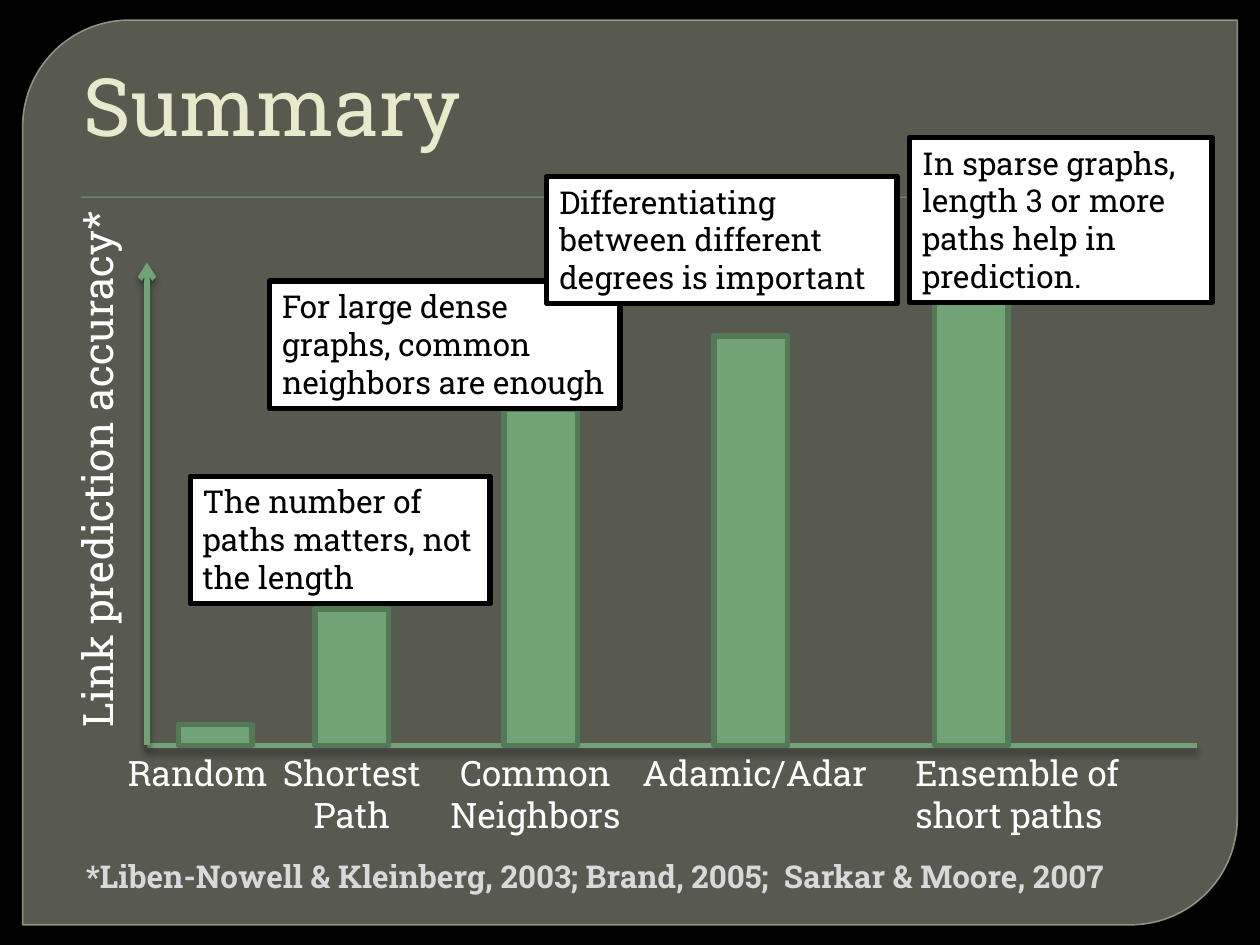
from lxml.etree import SubElement
from pptx import Presentation
from pptx.dml.color import RGBColor
from pptx.enum.shapes import MSO_CONNECTOR as Connector, MSO_SHAPE as Shape
from pptx.enum.text import MSO_ANCHOR as Anchor, PP_ALIGN as Align
from pptx.oxml.ns import qn
from pptx.util import Inches, Pt

BLACK = RGBColor(0x00, 0x00, 0x00)
WHITE = RGBColor(0xFF, 0xFF, 0xFF)
PANEL = RGBColor(0x88, 0x8B, 0x7B)
PANEL_EDGE = RGBColor(0x9D, 0xA0, 0x90)
GREEN = RGBColor(0x72, 0xA3, 0x76)
DARK_GREEN = RGBColor(0x54, 0x79, 0x57)
CREAM = RGBColor(0xE7, 0xEA, 0xCB)
SILVER = RGBColor(0xD9, 0xD9, 0xD9)

CELL = Inches(1) // 12  # the chart sits on a grid of twelve cells to the inch
BASELINE = 71
AXIS_LEFT, AXIS_RIGHT, AXIS_TOP = 14, 114, 25
BAR_WIDTH = 7


def write(shape, text, size=18, color=WHITE, bold=False, align=Align.LEFT, anchor=Anchor.TOP):
    frame = shape.text_frame
    frame.word_wrap = True
    frame.vertical_anchor = anchor
    para = frame.paragraphs[0]
    para.alignment = align
    span = para.add_run()
    span.text = text
    span.font.name = "Roboto Slab"
    span.font.size = Pt(size)
    span.font.bold = bold
    span.font.color.rgb = color


def add_shadow(shape, alpha, blur, distance):
    effects = SubElement(shape.element.spPr, qn("a:effectLst"))
    shadow = SubElement(effects, qn("a:outerShdw"), blurRad=str(Pt(blur)),
                        dist=str(Pt(distance)), dir="5400000", rotWithShape="0")
    tint = SubElement(shadow, qn("a:srgbClr"), val=str(BLACK))
    SubElement(tint, qn("a:alpha"), val=str(alpha * 1000))


deck = Presentation()
deck.slide_width, deck.slide_height = Inches(10), Inches(7.5)
page = deck.slides.add_slide(deck.slide_layouts[5])
shapes = page.shapes
page.background.fill.solid()
page.background.fill.fore_color.rgb = BLACK

# Rounded panel and the rule under the title
panel = shapes.add_shape(Shape.ROUND_2_DIAG_RECTANGLE,
                         Inches(0.18), Inches(0.16), Inches(9.64), Inches(7.18))
panel.adjustments[0], panel.adjustments[1] = 0.118, 0
panel.shadow.inherit = False
panel.fill.solid()
panel.fill.fore_color.rgb = PANEL
panel.line.color.rgb = PANEL_EDGE
panel.line.width = Pt(0.87)
for tint, alpha in zip(panel.element.spPr.iter(qn("a:srgbClr")), (65, 88)):
    SubElement(tint, qn("a:alpha"), val=str(alpha * 1000))

rule = shapes.add_shape(Shape.RECTANGLE, Inches(0.64), Inches(1.56), Inches(8.75), Inches(0.01))
rule.fill.solid()
rule.fill.fore_color.rgb = GREEN
rule.line.fill.background()
add_shadow(rule, alpha=75, blur=1, distance=1)

# Title, lifted above the panel
title = shapes.title
title.left, title.top, title.width, title.height = map(Inches, (0.5, 0.25, 9.17, 1.01))
title.text_frame.margin_left = Inches(0.16)
write(title, "Summary", size=46, color=CREAM, anchor=Anchor.BOTTOM)
rule.element.addnext(title.element)

# Axes
for end_x, end_y in ((AXIS_RIGHT, BASELINE), (AXIS_LEFT, AXIS_TOP)):
    axis = shapes.add_connector(Connector.STRAIGHT, CELL * AXIS_LEFT, CELL * BASELINE,
                                CELL * end_x, CELL * end_y)
    axis.line.color.rgb = GREEN
    axis.line.width = Pt(3)
    if end_y == AXIS_TOP:
        SubElement(axis.element.spPr.find(qn("a:ln")), qn("a:tailEnd"), type="arrow")
    add_shadow(axis, alpha=43, blur=4, distance=3)

# Bars and their labels: bar left, bar height, label left, label width in cells
bars = [
    ("Random", 17, 2, 11, 17, Align.LEFT),
    ("Shortest Path", 30, 13, 25, 17, Align.CENTER),
    ("Common Neighbors", 48, 32, 40, 22, Align.CENTER),
    ("Adamic/Adar", 68, 39, 60, 24, Align.LEFT),
    ("Ensemble of short paths", 89, 45, 86, 24, Align.LEFT),
]
for name, left, height, label_left, label_width, align in bars:
    bar = shapes.add_shape(Shape.RECTANGLE, CELL * left, CELL * (BASELINE - height),
                           CELL * BAR_WIDTH, CELL * height)
    bar.shadow.inherit = False
    bar.fill.solid()
    bar.fill.fore_color.rgb = GREEN
    bar.line.color.rgb = DARK_GREEN
    bar.line.width = Pt(3)
    label = shapes.add_textbox(CELL * label_left, CELL * BASELINE,
                               CELL * label_width, Inches(0.77))
    write(label, name, size=20, align=align)

# Axis title and sources
axis_title = shapes.add_textbox(Inches(-1.46), Inches(3.39), Inches(4.46), Inches(0.5))
axis_title.rotation = 270
write(axis_title, "Link prediction accuracy*", size=24)

sources = shapes.add_textbox(CELL * 7, CELL * 81, CELL * 104, Inches(0.4))
write(sources, "*Liben-Nowell & Kleinberg, 2003; Brand, 2005;  Sarkar & Moore, 2007",
      color=SILVER, bold=True)

# Callouts over the bars
callouts = [
    ("The number of paths matters, not the length", 1.51, 3.78, 2.38, 1.01),
    ("For large dense graphs, common neighbors are enough", 2.14, 2.23, 2.78, 1.01),
    ("Differentiating between different degrees is important", 4.34, 1.4, 2.78, 1.01),
    ("In sparse graphs, length 3 or more paths help in prediction.", 7.22, 1.09, 2.4, 1.31),
]
for text, *place in callouts:
    callout = shapes.add_shape(Shape.RECTANGLE, *map(Inches, place))
    callout.shadow.inherit = False
    callout.fill.solid()
    callout.fill.fore_color.rgb = WHITE
    callout.line.color.rgb = BLACK
    callout.line.width = Pt(3)
    write(callout, text, color=BLACK)

deck.save("out.pptx")
